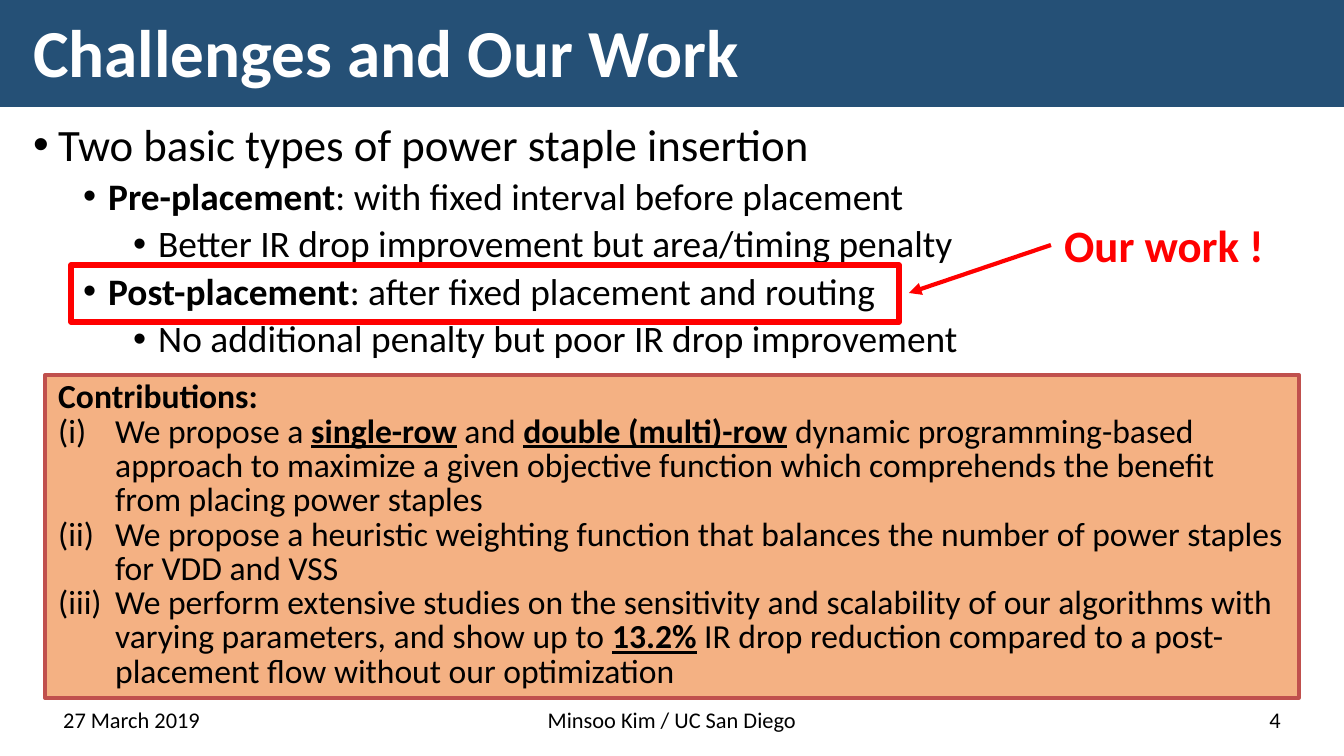
from lxml.etree import SubElement
from pptx import Presentation
from pptx.dml.color import RGBColor
from pptx.enum.shapes import MSO_CONNECTOR as Connector, MSO_SHAPE as Shape
from pptx.enum.text import MSO_ANCHOR as Anchor, MSO_AUTO_SIZE as AutoSize, PP_ALIGN as Align
from pptx.oxml.ns import qn
from pptx.util import Emu, Pt

COLORS = {
    "navy": "255076", "white": "FFFFFF", "black": "000000",
    "red": "FF0000", "orange": "F4B183", "brick": "C0504D",
}
FONT = "Calibri"
PX_PER_INCH = 134.4


def px(length):
    return Emu(round(length * 914400 / PX_PER_INCH))


def color(name):
    return RGBColor.from_string(COLORS[name])


class SlideBuilder:
    def __init__(self, presentation):
        self.slide = presentation.slides.add_slide(presentation.slide_layouts[6])

    def box(self, left, top, width, height, fill=None, line=None, weight=0):
        shape = self.slide.shapes.add_shape(
            Shape.RECTANGLE, px(left), px(top), px(width), px(height))
        shape.shadow.inherit = False
        if fill:
            shape.fill.solid()
            shape.fill.fore_color.rgb = color(fill)
        else:
            shape.fill.background()
        if line:
            shape.line.color.rgb = color(line)
            shape.line.width = Pt(weight)
        else:
            shape.line.fill.background()
        return shape

    def text_box(self, left, top, width, height, anchor=Anchor.TOP, wrap=True):
        shape = self.slide.shapes.add_textbox(px(left), px(top), px(width), px(height))
        shape.text_frame.word_wrap = wrap
        shape.text_frame.vertical_anchor = anchor
        return shape

    def paragraph(self, shape, text, size, ink="black", align=Align.LEFT,
                  spacing=None, before=None, underline=False):
        """Write one paragraph; parts between asterisks are bold."""
        frame = shape.text_frame
        paragraph = frame.paragraphs[0]
        if paragraph.runs:
            paragraph = frame.add_paragraph()
        paragraph.alignment = align
        paragraph.line_spacing = spacing
        if before is not None:
            paragraph.space_before = Pt(before)
        for index, part in enumerate(text.split("*")):
            if not part:
                continue
            strong = index % 2 == 1
            run = paragraph.add_run()
            run.text = part
            run.font.name = FONT
            run.font.size = Pt(size)
            run.font.color.rgb = color(ink)
            run.font.bold = strong
            run.font.underline = strong and underline
        return paragraph

    def bullet(self, paragraph, margin, hang, tag, **attributes):
        properties = paragraph._p.get_or_add_pPr()
        properties.set("marL", str(px(margin)))
        properties.set("indent", str(-px(hang)))
        SubElement(properties, qn("a:buFont"), typeface="Arial" if tag == "a:buChar" else FONT)
        SubElement(properties, qn(tag), **attributes)

    def arrow(self, source, side, end_x, end_y, ink, weight):
        connector = self.slide.shapes.add_connector(
            Connector.STRAIGHT, 0, 0, px(end_x), px(end_y))
        connector.begin_connect(source, side)
        connector.line.color.rgb = color(ink)
        connector.line.width = Pt(weight)
        properties = connector._element.spPr
        SubElement(properties.find(qn("a:ln")), qn("a:tailEnd"), type="triangle")
        SubElement(properties, qn("a:effectLst"))


def main():
    presentation = Presentation()
    presentation.slide_width, presentation.slide_height = px(1344), px(756)
    builder = SlideBuilder(presentation)

    # Title band
    builder.box(0, 0, 1344, 107, fill="navy")
    title = builder.text_box(20, 13, 1304, 85, Anchor.MIDDLE, wrap=False)
    builder.paragraph(title, "*Challenges and Our Work*", 36, "white", spacing=0.9)

    # Types of staple insertion: level and text
    body = builder.text_box(20, 116, 1304, 531)
    for level, text in (
        (0, "Two basic types of power staple insertion"),
        (1, "*Pre-placement*: with fixed interval before placement"),
        (2, "Better IR drop improvement but area/timing penalty"),
        (1, "*Post-placement*: after fixed placement and routing"),
        (2, "No additional penalty but poor IR drop improvement"),
    ):
        paragraph = builder.paragraph(body, text, 20 if level else 24, spacing=0.9,
                                      before=3.8 if level else 7.5)
        builder.bullet(paragraph, 25 + 50 * level, 25, "a:buChar", char="•")

    # Footer
    for left, width, align, text in (
        (50, 345, Align.LEFT, "27 March 2019"),
        (445, 454, Align.CENTER, "Minsoo Kim / UC San Diego"),
        (949, 345, Align.RIGHT, "4"),
    ):
        footer = builder.text_box(left, 700, width, 40, Anchor.BOTTOM)
        builder.paragraph(footer, text, 12, align=align)

    # Contributions
    panel = builder.box(45, 375, 1254, 323, "orange", "brick", 2)
    panel.text_frame.word_wrap = True
    panel.text_frame.vertical_anchor = Anchor.TOP
    builder.paragraph(panel, "*Contributions:*", 18, spacing=0.85)
    for text in (
        "We propose a *single-row* and *double (multi)-row* dynamic programming-based "
        "approach to maximize a given objective function which comprehends the benefit "
        "from placing power staples",
        "We propose a heuristic weighting function that balances the number of power "
        "staples for VDD and VSS",
        "We perform extensive studies on the sensitivity and scalability of our algorithms "
        "with varying parameters, and show up to *13.2%* IR drop reduction compared to a "
        "post-placement flow without our optimization",
    ):
        paragraph = builder.paragraph(panel, text, 18, spacing=0.85, underline=True)
        builder.bullet(paragraph, 57, 57, "a:buAutoNum", type="romanLcParenBoth")

    # Highlight of our work
    builder.box(71, 265, 828, 57, line="red", weight=3)
    callout = builder.text_box(1051, 211, 245, 68)
    callout.text_frame.auto_size = AutoSize.SHAPE_TO_FIT_TEXT
    builder.paragraph(callout, "*Our work !*", 24, "red")
    builder.arrow(callout, 1, 909, 293, "red", 2.25)

    presentation.save("out.pptx")


if __name__ == "__main__":
    main()
